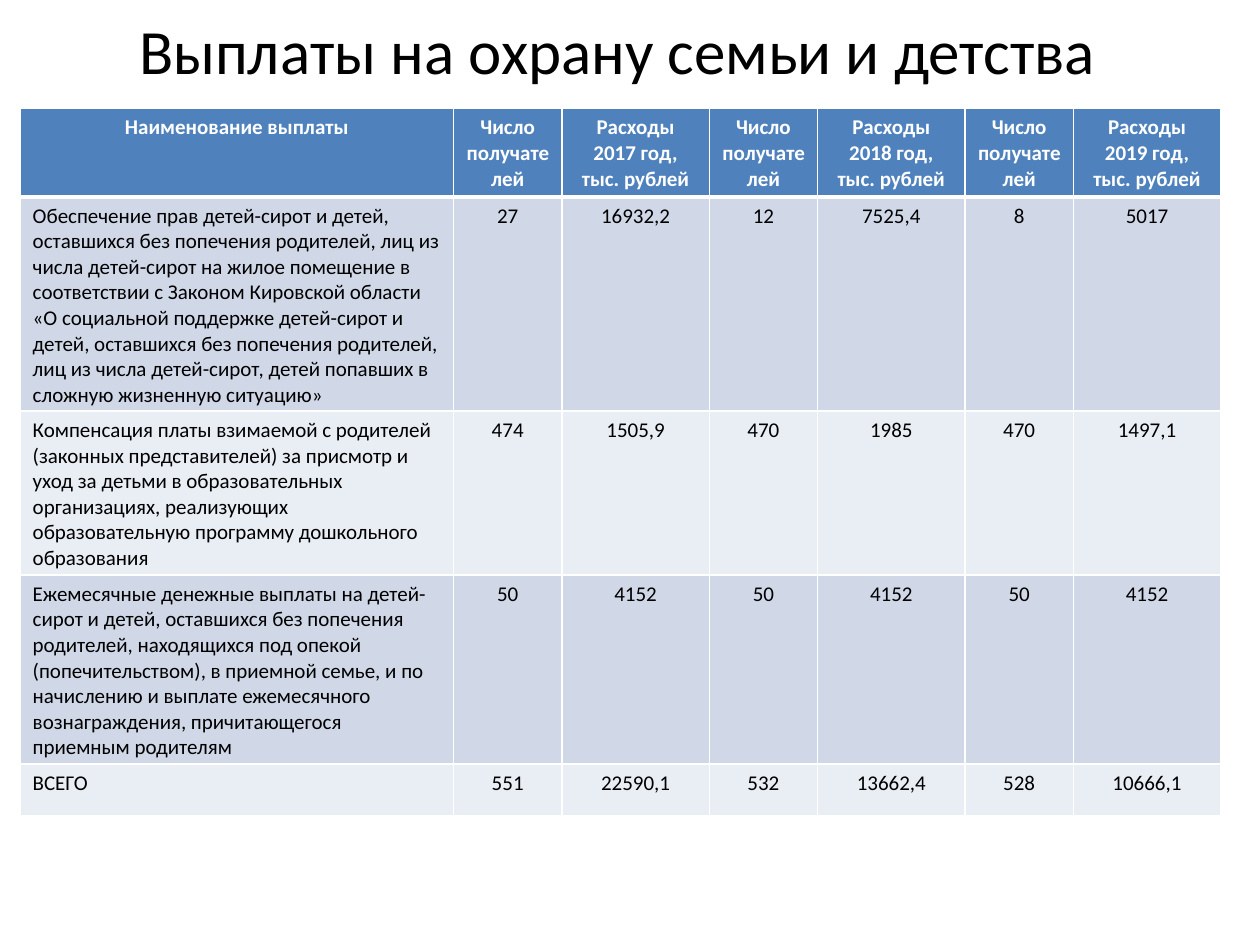
from typing import NamedTuple

from lxml import etree
from pptx import Presentation
from pptx.dml.color import RGBColor
from pptx.enum.text import MSO_ANCHOR, PP_ALIGN
from pptx.oxml.ns import qn
from pptx.util import Inches, Pt

LEFT, CENTER = PP_ALIGN.LEFT, PP_ALIGN.CENTER
MIDDLE = MSO_ANCHOR.MIDDLE
FONT = "Calibri"
COLORS = {
    "text": "000000",
    "white": "FFFFFF",
    "head": "4F81BD",
    "odd": "D0D8E8",
    "even": "E9EDF4",
}
WIDE, HIGH = 10, 7.5
YEARS = (2017, 2018, 2019)
NAME_COL, COUNT_COL, COST_COL = 3.44, 0.86, 1.17
HEAD_ROW, BODY_ROW = 0.7, 0.41
THIN, THICK = 1, 3


class Box(NamedTuple):
    """Left, top, width and height as shares of the slide."""
    x: float
    y: float
    w: float
    h: float

    def lengths(self) -> list[int]:
        sides = (WIDE, HIGH, WIDE, HIGH)
        return [Inches(part * side) for part, side in zip(self, sides)]


class Style(NamedTuple):
    size: int
    color: str
    bold: bool = False


class Payment(NamedTuple):
    name: str
    values: tuple[str, ...]


TITLE_BOX = Box(0.03, 0, 0.92, 0.105)
TABLE_BOX = Box(0.016, 0.115, 0.953, 0.748)
TITLE = Style(36, "text")
HEAD = Style(12, "white", True)
BODY = Style(12, "text")

PAYMENTS = [
    Payment(
        "Обеспечение прав детей-сирот и детей, оставшихся без попечения "
        "родителей, лиц из числа детей-сирот на жилое помещение в соответствии "
        "с Законом Кировской области «О социальной поддержке детей-сирот и "
        "детей, оставшихся без попечения родителей, лиц из числа детей-сирот, "
        "детей попавших в сложную жизненную ситуацию»",
        ("27", "16932,2", "12", "7525,4", "8", "5017")),
    Payment(
        "Компенсация платы взимаемой с родителей (законных представителей) за "
        "присмотр и уход за детьми в образовательных организациях, реализующих "
        "образовательную программу дошкольного образования",
        ("474", "1505,9", "470", "1985", "470", "1497,1")),
    Payment(
        "Ежемесячные денежные выплаты на детей-сирот и детей, оставшихся без "
        "попечения родителей, находящихся под опекой (попечительством), в "
        "приемной семье, и по начислению и выплате ежемесячного "
        "вознаграждения, причитающегося приемным родителям",
        ("50", "4152") * len(YEARS)),
    Payment("ВСЕГО", ("551", "22590,1", "532", "13662,4", "528", "10666,1")),
]


def write(frame, text: str, style: Style, align) -> None:
    para = frame.paragraphs[0]
    para.alignment = align
    run = para.add_run()
    run.text = text
    font = run.font
    font.name, font.size, font.bold = FONT, Pt(style.size), style.bold
    font.color.rgb = RGBColor.from_string(COLORS[style.color])


def edge(cell, row: int) -> None:
    """Give the cell white borders, thick between head and body."""
    props = cell._tc.get_or_add_tcPr()
    widths = {
        "L": THIN,
        "R": THIN,
        "T": THICK if row == 1 else THIN,
        "B": THICK if row == 0 else THIN,
    }
    for side, width in widths.items():
        line = etree.SubElement(props, qn(f"a:ln{side}"), w=str(Pt(width)))
        fill = etree.SubElement(line, qn("a:solidFill"))
        etree.SubElement(fill, qn("a:srgbClr"), val=COLORS["white"])


def add_title(slide) -> None:
    frame = slide.shapes.add_textbox(*TITLE_BOX.lengths()).text_frame
    frame.word_wrap = True
    frame.vertical_anchor = MIDDLE
    write(frame, "Выплаты на охрану семьи и детства", TITLE, CENTER)


def add_grid(slide) -> None:
    heads = ["Наименование выплаты"]
    for year in YEARS:
        heads += ["Число получателей", f"Расходы {year} год, тыс. рублей"]
    rows = [heads] + [[pay.name, *pay.values] for pay in PAYMENTS]
    box = TABLE_BOX.lengths()
    shape = slide.shapes.add_table(len(rows), len(heads), *box)
    table = shape.table

    widths = [NAME_COL] + [COUNT_COL, COST_COL] * len(YEARS)
    for col, width in zip(table.columns, widths):
        col.width = Inches(width)

    for i, texts in enumerate(rows):
        table.rows[i].height = Inches(BODY_ROW if i else HEAD_ROW)
        tone = ("odd" if i % 2 else "even") if i else "head"
        for j, text in enumerate(texts):
            cell = table.cell(i, j)
            edge(cell, i)
            cell.fill.solid()
            cell.fill.fore_color.rgb = RGBColor.from_string(COLORS[tone])
            align = LEFT if i and j == 0 else CENTER
            write(cell.text_frame, text, BODY if i else HEAD, align)
    shape.height = box[-1]


def main() -> None:
    deck = Presentation()
    deck.slide_width, deck.slide_height = Inches(WIDE), Inches(HIGH)
    slide = deck.slides.add_slide(deck.slide_layouts[6])
    add_title(slide)
    add_grid(slide)
    deck.save("out.pptx")


if __name__ == "__main__":
    main()
